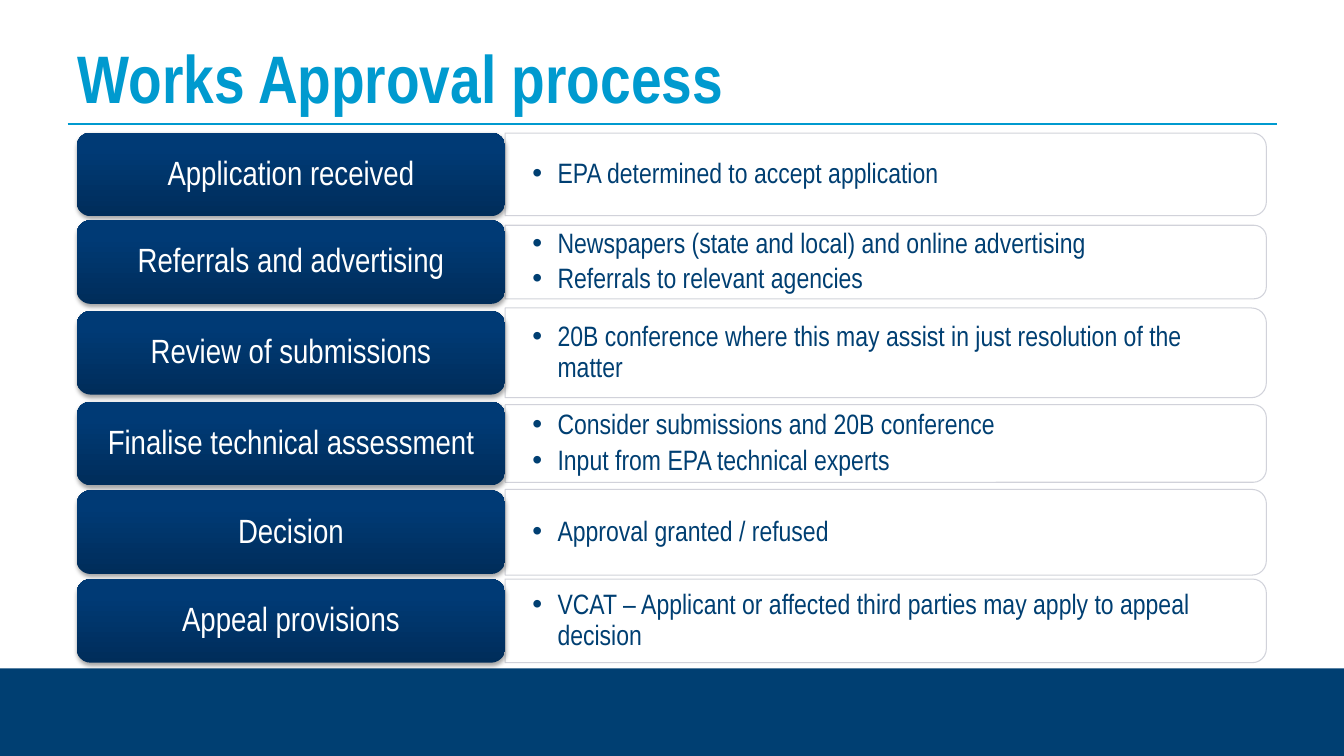
from dataclasses import dataclass

from lxml.etree import SubElement
from pptx import Presentation
from pptx.dml.color import RGBColor
from pptx.enum.shapes import MSO_CONNECTOR, MSO_SHAPE
from pptx.enum.text import MSO_ANCHOR, PP_ALIGN
from pptx.oxml.ns import qn
from pptx.util import Inches, Pt


@dataclass(frozen=True)
class Theme:
    font: str = "Arial Narrow"
    navy: RGBColor = RGBColor(0x00, 0x3F, 0x72)
    cyan: RGBColor = RGBColor(0x00, 0x9A, 0xCF)
    white: RGBColor = RGBColor(0xFF, 0xFF, 0xFF)
    border: RGBColor = RGBColor(0xCC, 0xCE, 0xD7)
    stage_dark: RGBColor = RGBColor(0x00, 0x2D, 0x5A)
    stage_light: RGBColor = RGBColor(0x00, 0x3A, 0x75)
    shadow: str = "000000"
    title_size: Pt = Pt(48)
    stage_size: Pt = Pt(24)
    detail_size: Pt = Pt(20)


def style_text(paragraph, size, color, bold=False):
    paragraph.font.name = theme.font
    paragraph.font.size = size
    paragraph.font.bold = bold
    paragraph.font.color.rgb = color


def set_frame(frame, side, edge):
    frame.word_wrap = True
    frame.vertical_anchor = MSO_ANCHOR.MIDDLE
    frame.margin_left = frame.margin_right = Inches(side)
    frame.margin_top = frame.margin_bottom = Inches(edge)


theme = Theme()
prs = Presentation()
prs.slide_width = Inches(13.33)
prs.slide_height = Inches(7.5)
slide = prs.slides.add_slide(prs.slide_layouts[6])
shapes = slide.shapes

footer = shapes.add_shape(
    MSO_SHAPE.RECTANGLE, 0, Inches(6.63), Inches(13.33), Inches(0.87)
)
footer.shadow.inherit = False
footer.fill.solid()
footer.fill.fore_color.rgb = theme.navy
footer.line.fill.background()

title_rule = shapes.add_connector(
    MSO_CONNECTOR.STRAIGHT, Inches(0.67), Inches(1.23), Inches(12.67), Inches(1.23)
)
title_rule.line.color.rgb = theme.cyan
title_rule.line.width = Pt(1.5)
SubElement(title_rule._element.spPr, qn("a:effectLst"))

title = shapes.add_textbox(Inches(0.67), Inches(0.3), Inches(12), Inches(0.93))
set_frame(title.text_frame, 0.1, 0.05)
title.text_frame.text = "Works Approval process"
style_text(title.text_frame.paragraphs[0], theme.title_size, theme.cyan, True)

stages = [
    (1.73, 0.82, "Application received", ["EPA determined to accept application"]),
    (2.6, 0.73, "Referrals and advertising", [
        "Newspapers (state and local) and online advertising",
        "Referrals to relevant agencies",
    ]),
    (3.5, 0.89, "Review of submissions", [
        "20B conference where this may assist in just resolution of the matter",
    ]),
    (4.4, 0.77, "Finalise technical assessment", [
        "Consider submissions and 20B conference",
        "Input from EPA technical experts",
    ]),
    (5.28, 0.85, "Decision", ["Approval granted / refused"]),
    (6.16, 0.83, "Appeal provisions", [
        "VCAT – Applicant or affected third parties may apply to appeal decision",
    ]),
]
stage_left, stage_width, stage_height = 0.76, 4.25, 0.83
detail_left, detail_width = stage_left + stage_width, 7.55

for middle, panel_height, stage_name, details in stages:
    panel = shapes.add_shape(
        MSO_SHAPE.ROUND_2_SAME_RECTANGLE,
        Inches(detail_left + (detail_width - panel_height) / 2),
        Inches(middle - detail_width / 2),
        Inches(panel_height),
        Inches(detail_width),
    )
    panel.rotation = 90
    panel.shadow.inherit = False
    panel.fill.background()
    panel.line.color.rgb = theme.border
    panel.line.width = Pt(0.75)
    border_color = panel.line._ln.find(".//" + qn("a:srgbClr"))
    SubElement(border_color, qn("a:alpha"), val="90000")

    detail = shapes.add_textbox(
        Inches(detail_left), Inches(middle - panel_height / 2),
        Inches(detail_width - 0.04), Inches(panel_height),
    )
    set_frame(detail.text_frame, 0.27, 0.14)
    detail.text_frame.text = "\n".join(details)
    for point in detail.text_frame.paragraphs:
        properties = point._p.get_or_add_pPr()
        properties.set("marL", str(Inches(0.25)))
        properties.set("indent", str(-Inches(0.25)))
        SubElement(properties, qn("a:buFont"), typeface="Arial")
        SubElement(properties, qn("a:buChar"), char="•")
        point.line_spacing = 0.9
        point.space_after = Pt(3.6)
        style_text(point, theme.detail_size, theme.navy)

    stage = shapes.add_shape(
        MSO_SHAPE.ROUNDED_RECTANGLE,
        Inches(stage_left), Inches(middle - stage_height / 2),
        Inches(stage_width), Inches(stage_height),
    )
    stage.fill.gradient()
    stage.fill.gradient_angle = 90
    dark_stop, light_stop = stage.fill.gradient_stops
    dark_stop.color.rgb, dark_stop.position = theme.stage_dark, 0
    light_stop.color.rgb, light_stop.position = theme.stage_light, 0.8
    stage.line.fill.background()
    stage.shadow.inherit = False
    effects = stage._element.spPr.find(qn("a:effectLst"))
    drop = SubElement(
        effects, qn("a:outerShdw"), blurRad=str(Pt(3.1)), dist=str(Pt(1.8)),
        dir="5400000", rotWithShape="0",
    )
    drop_color = SubElement(drop, qn("a:srgbClr"), val=theme.shadow)
    SubElement(drop_color, qn("a:alpha"), val="35000")
    set_frame(stage.text_frame, 0.1, 0.05)
    stage.text_frame.text = stage_name
    label = stage.text_frame.paragraphs[0]
    label.alignment = PP_ALIGN.CENTER
    label.line_spacing = 0.9
    style_text(label, theme.stage_size, theme.white)

prs.save("out.pptx")
